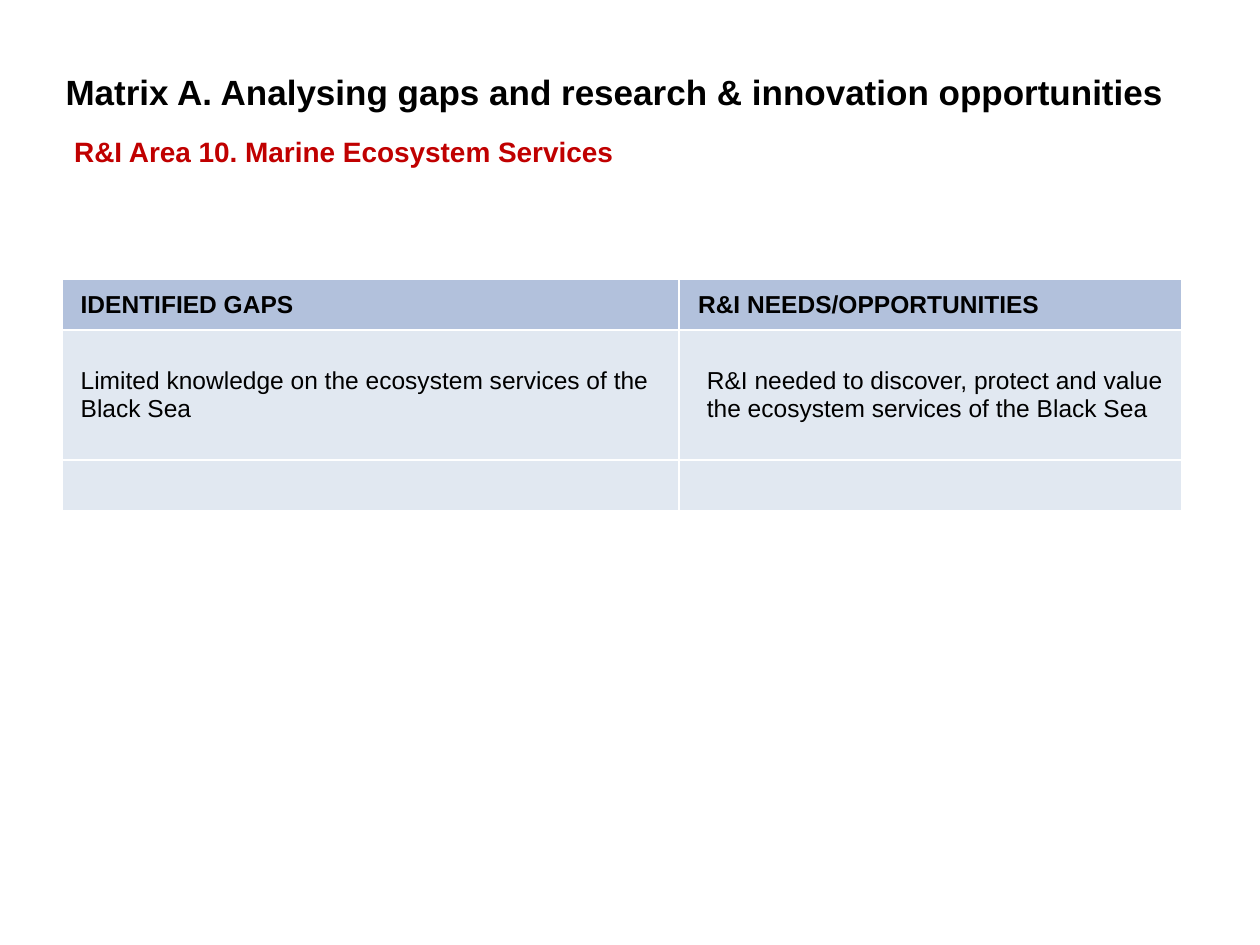
from lxml import etree
from pptx import Presentation
from pptx.dml.color import RGBColor
from pptx.enum.text import MSO_ANCHOR, PP_ALIGN
from pptx.oxml.ns import qn
from pptx.util import Inches, Pt

MIDDLE = MSO_ANCHOR.MIDDLE
LEFT = PP_ALIGN.LEFT

BLACK = RGBColor(0x00, 0x00, 0x00)
RED = RGBColor(0xC0, 0x00, 0x00)
WHITE = RGBColor(0xFF, 0xFF, 0xFF)
HEADER_BLUE = RGBColor(0xB2, 0xC1, 0xDC)
BODY_BLUE = RGBColor(0xE1, 0xE8, 0xF1)

TITLE_ONLY = 5
COLUMN_WIDTHS = (4.9, 3.99)
ROW_HEIGHTS = (0.4, 1.03, 0.4)
ROWS = (
    ("IDENTIFIED GAPS", "R&I NEEDS/OPPORTUNITIES"),
    ("Limited knowledge on the ecosystem services of the Black Sea",
     "R&I needed to discover, protect and value the ecosystem services of the Black Sea"),
    ("", ""),
)


class MatrixSlide:
    font = "Arial"

    def __init__(self, presentation):
        self.slide = presentation.slides.add_slide(presentation.slide_layouts[TITLE_ONLY])

    def set_text(self, text_frame, text, size, color=BLACK, bold=True):
        text_frame.text = text
        paragraph = text_frame.paragraphs[0]
        paragraph.alignment = LEFT
        for run in paragraph.runs:
            run.font.name = self.font
            run.font.size = Pt(size)
            run.font.bold = bold
            run.font.color.rgb = color
        return paragraph

    def title(self, text, left, top, width, height):
        shape = self.slide.shapes.title
        shape.left, shape.top = Inches(left), Inches(top)
        shape.width, shape.height = Inches(width), Inches(height)
        shape.text_frame.vertical_anchor = MIDDLE
        self.set_text(shape.text_frame, text, 20)

    def subtitle(self, text, left, top, width, height):
        shape = self.slide.shapes.add_textbox(
            Inches(left), Inches(top), Inches(width), Inches(height))
        shape.text_frame.word_wrap = True
        self.set_text(shape.text_frame, text, 16, RED)

    def table(self, rows, left, top):
        table = self.slide.shapes.add_table(
            len(rows), len(COLUMN_WIDTHS), Inches(left), Inches(top),
            Inches(sum(COLUMN_WIDTHS)), Inches(sum(ROW_HEIGHTS))).table
        for column, width in zip(table.columns, COLUMN_WIDTHS):
            column.width = Inches(width)
        for row, height in zip(table.rows, ROW_HEIGHTS):
            row.height = Inches(height)
        for row_index, texts in enumerate(rows):
            for column_index, text in enumerate(texts):
                cell = table.cell(row_index, column_index)
                self.cell(cell, text, header=row_index == 0)
        opportunity = table.cell(1, 1)
        opportunity.margin_left = opportunity.margin_right = Inches(0.07)

    def cell(self, cell, text, header):
        cell.fill.solid()
        cell.fill.fore_color.rgb = HEADER_BLUE if header else BODY_BLUE
        self.borders(cell)
        if not text:
            return
        cell.vertical_anchor = MIDDLE
        cell.margin_left = cell.margin_right = cell.margin_top = cell.margin_bottom = 0
        paragraph = self.set_text(cell.text_frame, text, 14, bold=header)
        paragraph.space_before = paragraph.space_after = Pt(3)
        properties = paragraph._p.get_or_add_pPr()
        properties.set("marL", str(Inches(0.15)))
        properties.set("indent", "0")

    def borders(self, cell):
        properties = cell._tc.get_or_add_tcPr()
        for position, side in enumerate(("a:lnL", "a:lnR", "a:lnT", "a:lnB")):
            line = etree.Element(qn(side), w=str(Pt(1)))
            fill = etree.SubElement(line, qn("a:solidFill"))
            etree.SubElement(fill, qn("a:srgbClr"), val=str(WHITE))
            properties.insert(position, line)


def main():
    presentation = Presentation()
    presentation.slide_width = Inches(10)
    presentation.slide_height = Inches(7.5)
    matrix = MatrixSlide(presentation)
    matrix.title("Matrix A. Analysing gaps and research & innovation opportunities",
                 0.42, 0.43, 9.13, 0.59)
    matrix.subtitle("R&I Area 10. Marine Ecosystem Services", 0.49, 1.02, 4.91, 0.37)
    matrix.table(ROWS, 0.49, 2.22)
    presentation.save("out.pptx")


if __name__ == "__main__":
    main()
